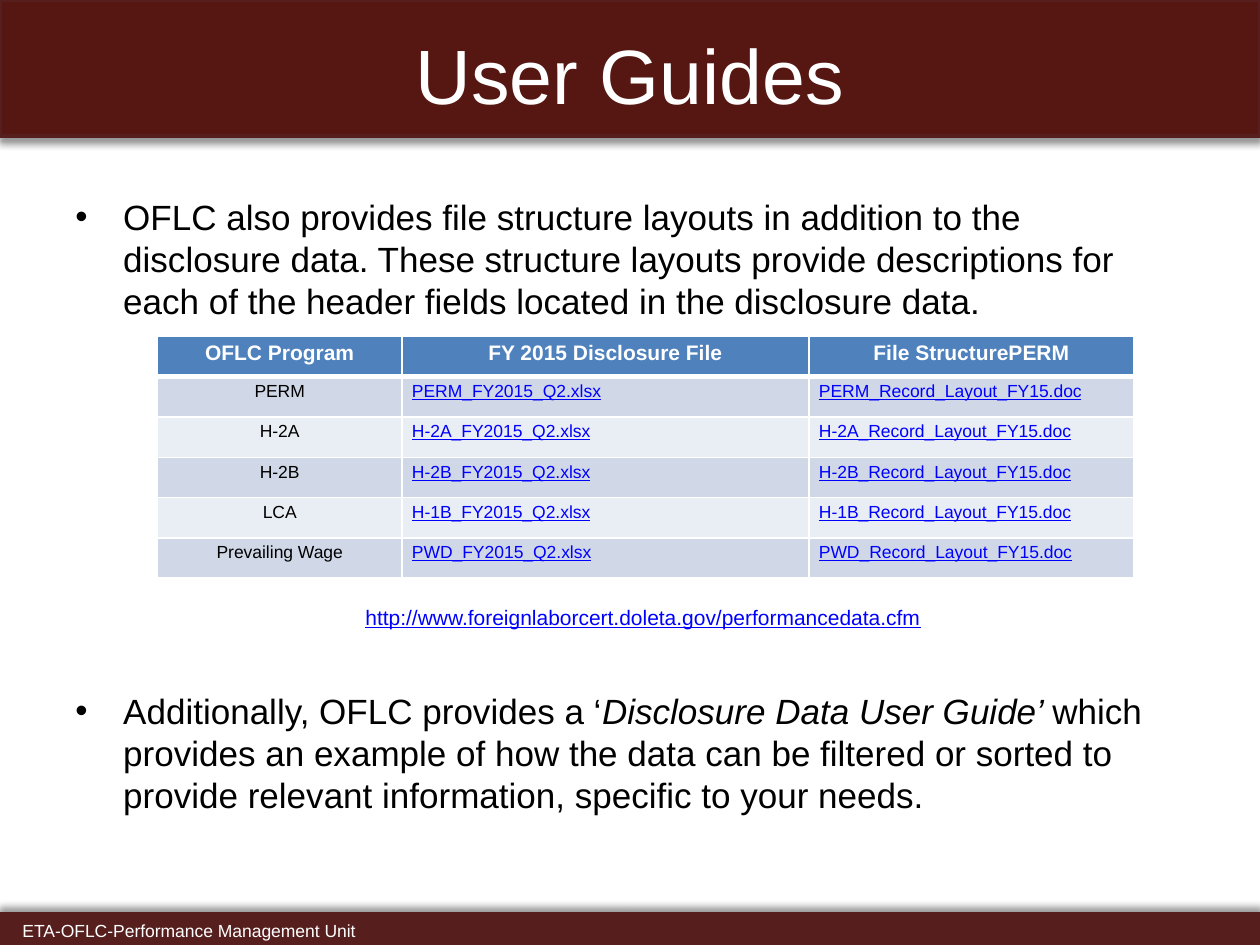
from lxml import etree
from pptx import Presentation
from pptx.dml.color import RGBColor
from pptx.enum.shapes import MSO_SHAPE
from pptx.enum.text import MSO_AUTO_SIZE, PP_ALIGN
from pptx.oxml import parse_xml
from pptx.oxml.ns import nsdecls, qn
from pptx.util import Inches, Pt

RECTANGLE = MSO_SHAPE.RECTANGLE
LEFT, CENTER = PP_ALIGN.LEFT, PP_ALIGN.CENTER
GROW = MSO_AUTO_SIZE.SHAPE_TO_FIT_TEXT

COLORS = {
    "header": "561712", "maroon": "561F1E", "white": "FFFFFF", "black": "000000",
    "link": "0000FF", "table_head": "4F81BD", "band_dark": "D0D8E8", "band_light": "E9EDF4",
}


def style(paragraph, size, color, align=LEFT, bold=False, underline=False):
    paragraph.alignment = align
    font = paragraph.font
    font.name, font.size = "Arial", Pt(size)
    font.bold, font.underline = bold, underline
    font.color.rgb = RGBColor.from_string(COLORS[color])


def add_text(left, top, width, height):
    """Add an empty wrapping text box and return its text frame."""
    frame = slide.shapes.add_textbox(
        Inches(left), Inches(top), Inches(width), Inches(height)).text_frame
    frame.word_wrap = True
    return frame


presentation = Presentation()
presentation.slide_width, presentation.slide_height = Inches(10), Inches(7.5)
slide = presentation.slides.add_slide(presentation.slide_layouts[6])

# Header and footer bands, each casting its shadow towards the content
for top, height, color, direction in [(0, 1.08, "header", 90), (7.25, 0.25, "maroon", 270)]:
    band = slide.shapes.add_shape(RECTANGLE, 0, Inches(top), Inches(10), Inches(height))
    band.fill.solid()
    band.fill.fore_color.rgb = RGBColor.from_string(COLORS[color])
    band.line.color.rgb = RGBColor.from_string(COLORS["maroon"])
    band.line.width = Pt(2)
    band.shadow.inherit = False
    band._element.spPr.find(qn("a:effectLst")).append(parse_xml(
        f'<a:outerShdw {nsdecls("a")} blurRad="{Pt(4)}" dist="{Pt(3)}" dir="{direction * 60000}" '
        f'rotWithShape="0"><a:srgbClr val="{COLORS["black"]}"><a:alpha val="40000"/>'
        '</a:srgbClr></a:outerShdw>'))

footer = add_text(0.08, 7.25, 4.17, 0.27)
footer.auto_size = GROW
footer.text = "ETA-OFLC-Performance Management Unit"
style(footer.paragraphs[0], 10, "white")

title = add_text(0.5, 0.17, 9, 1.25)
title.text = "User Guides"
style(title.paragraphs[0], 44, "white", CENTER)

# Bulleted statements above and below the table: (text, italic) runs
statements = [
    (1.5, [("OFLC also provides file structure layouts in addition to the disclosure data. "
            "These structure layouts provide descriptions for each of the header fields "
            "located in the disclosure data.", False)]),
    (5.42, [("Additionally, OFLC provides a ‘", False),
            ("Disclosure Data User Guide’ ", True),
            ("which provides an example of how the data can be filtered or sorted to "
             "provide relevant information, specific to your needs.", False)]),
]
for top, runs in statements:
    statement = add_text(0.5, top, 9, 1.25).paragraphs[0]
    properties = statement._p.get_or_add_pPr()
    properties.set("marL", str(Inches(0.38)))
    properties.set("indent", str(-Inches(0.38)))
    etree.SubElement(properties, qn("a:buFont"), typeface="Arial")
    etree.SubElement(properties, qn("a:buChar"), char="•")
    style(statement, 20, "black")
    for text, italic in runs:
        run = statement.add_run()
        run.text = text
        run.font.italic = italic

address = add_text(2.71, 4.75, 4.79, 0.3)
address.auto_size = GROW
address.text = "http://www.foreignlaborcert.doleta.gov/performancedata.cfm"
style(address.paragraphs[0], 12, "link", CENTER, underline=True)

# Programs with their disclosure file and record layout
programs = [("PERM", "PERM"), ("H-2A", "H-2A"), ("H-2B", "H-2B"),
            ("LCA", "H-1B"), ("Prevailing Wage", "PWD")]
rows = [("OFLC Program", "FY 2015 Disclosure File", "File StructurePERM")]
rows += [(program, f"{prefix}_FY2015_Q2.xlsx", f"{prefix}_Record_Layout_FY15.doc")
         for program, prefix in programs]
column_widths = [1.94, 3.23, 2.58]
row_height = 0.32

table = slide.shapes.add_table(
    len(rows), len(column_widths), Inches(1.25), Inches(2.67),
    Inches(sum(column_widths)), Inches(row_height * len(rows))).table
for column, width in zip(table.columns, column_widths):
    column.width = Inches(width)

for r, row in enumerate(rows):
    table.rows[r].height = Inches(row_height)
    for c, text in enumerate(row):
        cell = table.cell(r, c)
        cell.margin_left = cell.margin_right = Inches(0.08)
        cell.margin_top = cell.margin_bottom = Inches(0.04)
        cell.text = text
        paragraph = cell.text_frame.paragraphs[0]
        if r == 0:
            fill = "table_head"
            style(paragraph, 12, "white", CENTER, bold=True)
        else:
            fill = "band_dark" if r % 2 else "band_light"
            if c == 0:
                style(paragraph, 10, "black", CENTER)
            else:
                style(paragraph, 10, "link", underline=True)
        for side in "LRTB":
            under_header = (r, side) in [(0, "B"), (1, "T")]
            cell._tc.get_or_add_tcPr().append(parse_xml(
                f'<a:ln{side} {nsdecls("a")} w="{Pt(3 if under_header else 1)}"><a:solidFill>'
                f'<a:srgbClr val="{COLORS["white"]}"/></a:solidFill></a:ln{side}>'))
        cell.fill.solid()
        cell.fill.fore_color.rgb = RGBColor.from_string(COLORS[fill])

presentation.save("out.pptx")
